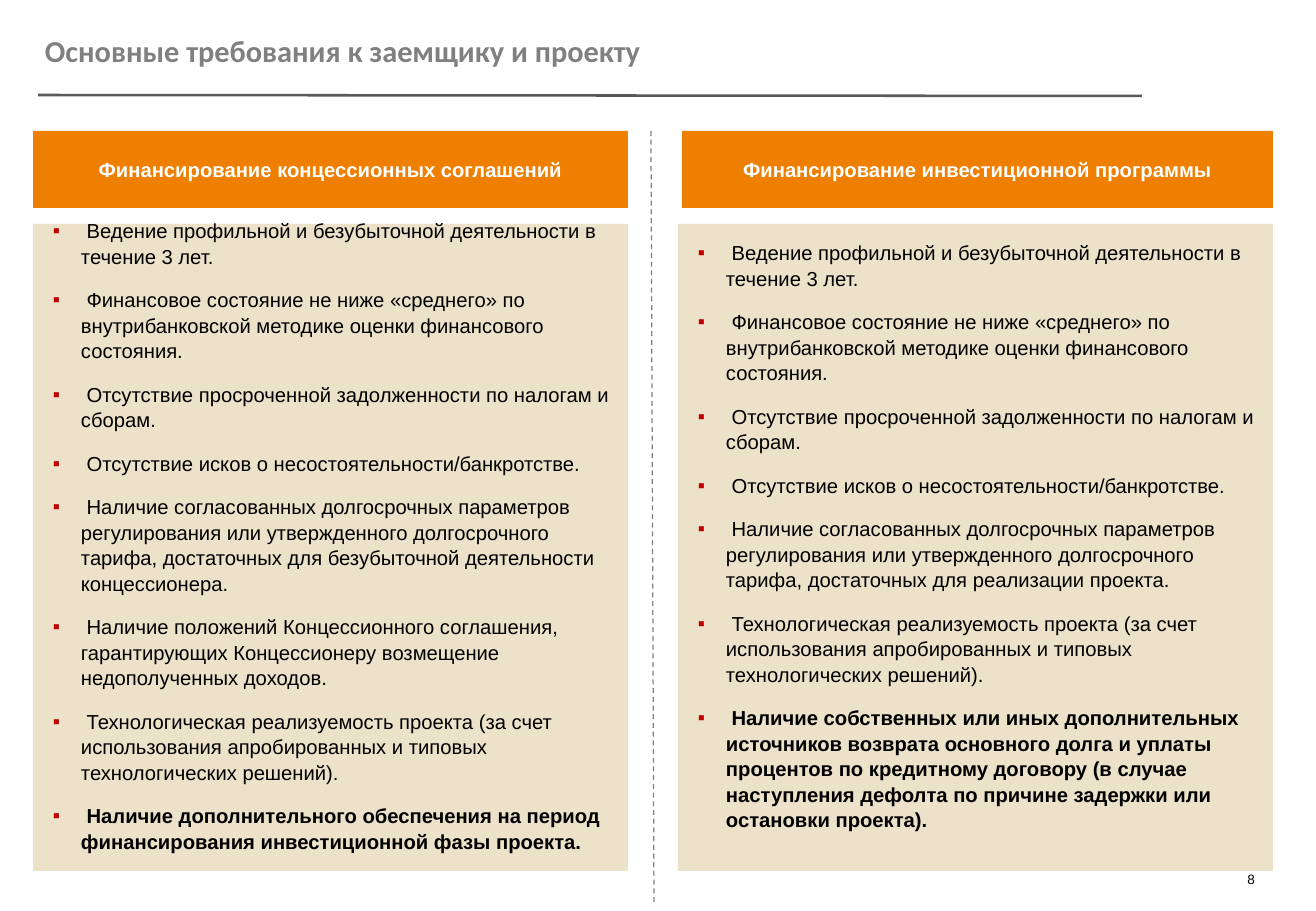
from lxml import etree
from pptx import Presentation
from pptx.dml.color import RGBColor
from pptx.enum.dml import MSO_LINE
from pptx.enum.shapes import MSO_CONNECTOR, MSO_SHAPE
from pptx.enum.text import MSO_ANCHOR, PP_ALIGN
from pptx.oxml.ns import qn
from pptx.util import Pt

PX = 7526  # EMU per px
ORANGE = RGBColor(0xEE, 0x7F, 0x00)
SAND = RGBColor(0xEC, 0xE2, 0xC9)
RED = RGBColor(0xC0, 0x00, 0x00)
GREY = RGBColor(0x80, 0x80, 0x80)
DARK = RGBColor(0x59, 0x59, 0x59)
BLACK = RGBColor(0, 0, 0)
WHITE = RGBColor(0xFF, 0xFF, 0xFF)

COMMON = [
    "Ведение профильной и безубыточной деятельности в течение 3 лет.",
    "Финансовое состояние не ниже «среднего» по внутрибанковской методике "
    "оценки финансового состояния.",
    "Отсутствие просроченной задолженности по налогам и сборам.",
    "Отсутствие исков о несостоятельности/банкротстве.",
]
TARIFF = ("Наличие согласованных долгосрочных параметров регулирования или "
          "утвержденного долгосрочного тарифа, достаточных для ")
TECHNOLOGY = ("Технологическая реализуемость проекта (за счет использования "
              "апробированных и типовых технологических решений).")
CONCESSION = COMMON + [
    TARIFF + "безубыточной деятельности концессионера.",
    "Наличие положений Концессионного соглашения, гарантирующих "
    "Концессионеру возмещение недополученных доходов.",
    TECHNOLOGY,
    "Наличие дополнительного обеспечения на период финансирования "
    "инвестиционной фазы проекта.",
]
INVESTMENT = COMMON + [
    TARIFF + "реализации проекта.",
    TECHNOLOGY,
    "Наличие собственных или иных дополнительных источников возврата "
    "основного долга и уплаты процентов по кредитному договору (в случае "
    "наступления дефолта по причине задержки или остановки проекта).",
]


def px(*lengths):
    return [round(n * PX) for n in lengths]


def write(p, text, size=12, color=BLACK, font="Arial", bold=False,
          align=PP_ALIGN.LEFT):
    p.alignment = align
    r = p.add_run()
    r.text = text
    r.font.size = Pt(size)
    r.font.name = font
    r.font.bold = bold
    r.font.color.rgb = color


def add_label(slide, box, text, anchor=MSO_ANCHOR.TOP, **fmt):
    tf = slide.shapes.add_textbox(*px(*box)).text_frame
    tf.word_wrap = True
    tf.vertical_anchor = anchor
    write(tf.paragraphs[0], text, **fmt)


def add_box(slide, box, fill):
    """Add a borderless rectangle and return its text frame."""
    sp = slide.shapes.add_shape(MSO_SHAPE.RECTANGLE, *px(*box))
    sp.shadow.inherit = False
    sp.fill.solid()
    sp.fill.fore_color.rgb = fill
    sp.line.fill.background()
    tf = sp.text_frame
    tf.word_wrap = True
    tf.vertical_anchor = MSO_ANCHOR.MIDDLE
    return tf


def add_line(slide, ends, color, width, dash=None):
    line = slide.shapes.add_connector(MSO_CONNECTOR.STRAIGHT, *px(*ends))
    line.line.color.rgb = color
    line.line.width = Pt(width)
    if dash:
        line.line.dash_style = dash
    etree.SubElement(line._element.spPr, qn("a:effectLst"))


def add_bullet(p):
    """Give the paragraph a red square with a hanging indent."""
    pPr = p._p.get_or_add_pPr()
    margin, hang = px(48, 28)
    pPr.set("marL", str(margin))
    pPr.set("indent", str(-hang))
    color = etree.SubElement(pPr, qn("a:buClr"))
    etree.SubElement(color, qn("a:srgbClr"), val=str(RED))
    etree.SubElement(pPr, qn("a:buFont"), typeface="Arial")
    etree.SubElement(pPr, qn("a:buChar"), char="▪")


def add_heading(slide, box, text):
    tf = add_box(slide, box, ORANGE)
    write(tf.paragraphs[0], text, color=WHITE, bold=True,
          align=PP_ALIGN.CENTER)


def add_requirements(slide, box, items):
    """Bulleted panel whose last item is bold."""
    tf = add_box(slide, box, SAND)
    (tf.margin_left, tf.margin_top,
     tf.margin_right, tf.margin_bottom) = px(0, 6, 12, 30)
    for i, item in enumerate(items):
        p = tf.paragraphs[0] if i == 0 else tf.add_paragraph()
        add_bullet(p)
        p.line_spacing = 1.05
        if i:
            p.space_before = Pt(10.7)
        write(p, " " + item, bold=i == len(items) - 1)


def add_requirements_slide(prs):
    slide = prs.slides.add_slide(prs.slide_layouts[6])
    add_line(slide, (38, 95, 1142, 96), DARK, 1.5)
    add_label(slide, (33, 26, 1029, 49),
              "Основные требования к заемщику и проекту",
              size=18, color=GREY, font="Calibri", bold=True)
    add_heading(slide, (33, 131, 595, 77),
                "Финансирование концессионных соглашений")
    add_heading(slide, (682, 131, 591, 77),
                "Финансирование инвестиционной программы")
    add_line(slide, (651, 131, 654, 902), GREY, 0.75, MSO_LINE.DASH)
    for left, items in ((33, CONCESSION), (678, INVESTMENT)):
        add_requirements(slide, (left, 224, 595, 647), items)
    add_label(slide, (984, 848, 283, 63), "8", anchor=MSO_ANCHOR.MIDDLE,
              size=8, align=PP_ALIGN.RIGHT)


def main():
    prs = Presentation()
    prs.slide_width, prs.slide_height = px(1316, 911)
    add_requirements_slide(prs)
    prs.save("out.pptx")


if __name__ == "__main__":
    main()
